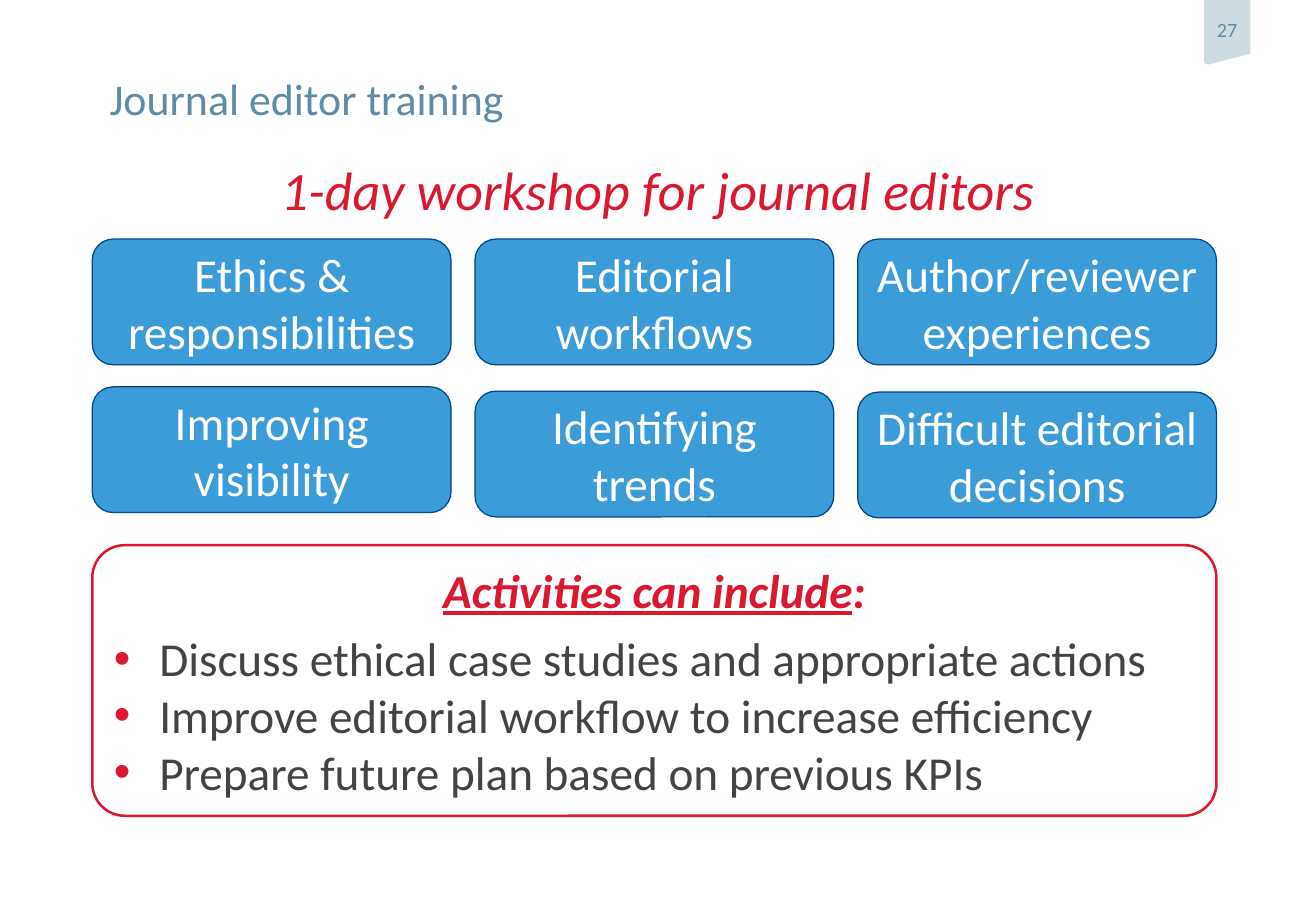
from dataclasses import dataclass

from lxml.etree import SubElement
from pptx import Presentation
from pptx.dml.color import RGBColor
from pptx.enum.shapes import MSO_SHAPE
from pptx.enum.text import MSO_ANCHOR, MSO_AUTO_SIZE, PP_ALIGN
from pptx.oxml.ns import qn
from pptx.util import Cm, Pt


@dataclass(frozen=True)
class Theme:
    """Colours, font and type sizes of the slide."""
    font: str = "Calibri"
    white: str = "FFFFFF"
    slate: str = "608BA3"
    mist: str = "CEDBE0"
    blue: str = "3C9CD7"
    navy: str = "00468A"
    red: str = "DB1830"
    ink: str = "424344"
    small: int = 12
    title: int = 26
    text: int = 28
    lead: int = 32


class Deck:
    """Draws styled elements on the current slide."""

    def __init__(self, theme, width, height):
        """Open a deck of the given size with one slide."""
        self.theme = theme
        self.file = Presentation()
        self.file.slide_width, self.file.slide_height = Cm(width), Cm(height)
        self.slide = self.file.slides.add_slide(self.file.slide_layouts[1])

    def place(self, shape, box):
        """Move a shape to a box in centimetres."""
        shape.left, shape.top, shape.width, shape.height = map(Cm, box)

    def frame(self, shape, anchor=MSO_ANCHOR.TOP, inset=(0, 0, 0, 0), wrap=True):
        """Set up the text frame of a shape and return it."""
        frame = shape.text_frame
        frame.auto_size = MSO_AUTO_SIZE.NONE
        frame.word_wrap = wrap
        frame.vertical_anchor = anchor
        (frame.margin_left, frame.margin_top,
         frame.margin_right, frame.margin_bottom) = map(Cm, inset)
        return frame

    def run(self, para, text, size, color, **style):
        """Add one styled run to a paragraph."""
        run = para.add_run()
        run.text = text
        font = run.font
        font.name, font.size = self.theme.font, Pt(size)
        font.color.rgb = RGBColor.from_string(color)
        for name, value in style.items():
            setattr(font, name, value)

    def align(self, para, side, before=0):
        """Set the alignment and the space before a paragraph."""
        para.alignment = side
        para.space_before = Pt(before)

    def bullet(self, para, indent, color):
        """Give a paragraph a coloured bullet, or none without an indent."""
        props = para._p.get_or_add_pPr()
        props.set("marL", str(Cm(indent)))
        props.set("indent", str(-Cm(indent)))
        if not indent:
            SubElement(props, qn("a:buNone"))
            return
        tint = SubElement(props, qn("a:buClr"))
        SubElement(tint, qn("a:srgbClr"), val=color)
        SubElement(props, qn("a:buFont"), typeface="Arial")
        SubElement(props, qn("a:buChar"), char="•")

    def paint(self, shape, fill, line=None, width=0.75):
        """Set the fill and outline of a shape and drop its shadow."""
        shape.shadow.inherit = False
        shape.fill.solid()
        shape.fill.fore_color.rgb = RGBColor.from_string(fill)
        if line:
            shape.line.color.rgb = RGBColor.from_string(line)
            shape.line.width = Pt(width)
        else:
            shape.line.fill.background()

    def title(self, text, box):
        """Fill the title placeholder."""
        shape = self.slide.shapes.title
        self.place(shape, box)
        para = self.frame(shape).paragraphs[0]
        self.align(para, PP_ALIGN.LEFT)
        self.run(para, text, self.theme.title, self.theme.slate)

    def lead(self, text, box):
        """Add the centred italic lead line."""
        shape = self.slide.shapes.add_textbox(*map(Cm, box))
        para = self.frame(shape, inset=(0.2,) * 4).paragraphs[0]
        self.align(para, PP_ALIGN.CENTER)
        self.run(para, text, self.theme.lead, self.theme.red, italic=True)

    def round(self, box, fill, line, width=0.75):
        """Add a rounded rectangle."""
        shape = self.slide.shapes.add_shape(MSO_SHAPE.ROUNDED_RECTANGLE, *map(Cm, box))
        self.paint(shape, fill, line, width)
        return shape

    def tile(self, text, box):
        """Add a topic tile."""
        shape = self.round(box, self.theme.blue, self.theme.navy)
        frame = self.frame(shape, MSO_ANCHOR.MIDDLE, (0.2, 0.13, 0.2, 0.13))
        para = frame.paragraphs[0]
        self.align(para, PP_ALIGN.CENTER)
        self.run(para, text, self.theme.text, self.theme.white)

    def panel(self, head, items, box, pad):
        """Add an outlined panel holding a heading and a bulleted list."""
        theme = self.theme
        shape = self.round(box, theme.white, theme.red, 1.5)
        shape.adjustments[0] = 0.12
        body = self.slide.placeholders[1]
        left, top, width, height = box
        self.place(body, (left + pad, top + pad, width - 2 * pad, height - 2 * pad))
        shape._element.addnext(body._element)
        frame = self.frame(body, inset=(0.25, 0.13, 0.25, 0.13))
        para = frame.paragraphs[0]
        self.bullet(para, 0, theme.red)
        self.align(para, PP_ALIGN.CENTER)
        strong = {"bold": True, "italic": True}
        self.run(para, head, theme.text, theme.red, underline=True, **strong)
        self.run(para, ":", theme.text, theme.red, **strong)
        for index, item in enumerate(items):
            para = frame.add_paragraph()
            self.bullet(para, 0.95, theme.red)
            self.align(para, PP_ALIGN.LEFT, 0 if index else 7)
            self.run(para, item, theme.text, theme.ink)

    def badge(self, text, points):
        """Add the page number on its ribbon."""
        first, *rest = [tuple(map(Cm, point)) for point in points]
        pen = self.slide.shapes.build_freeform(*first)
        pen.add_line_segments(rest)
        shape = pen.convert_to_shape()
        self.paint(shape, self.theme.mist)
        frame = self.frame(shape, MSO_ANCHOR.MIDDLE, (0, 0, 0, 0.1), False)
        para = frame.paragraphs[0]
        self.align(para, PP_ALIGN.CENTER)
        self.run(para, text, self.theme.small, self.theme.slate)


TOPICS = [
    ("Ethics & responsibilities", "Improving visibility", 8.09),
    ("Editorial workflows", "Identifying trends", 8.18),
    ("Author/reviewer experiences", "Difficult editorial decisions", 8.2),
]
ACTIONS = [
    "Discuss ethical case studies and appropriate actions",
    "Improve editorial workflow to increase efficiency",
    "Prepare future plan based on previous KPIs",
]
RIBBON = [(25.17, 0), (26.14, 0), (26.14, 1.12), (25.27, 1.35), (25.2, 1.34), (25.17, 1.27)]


def main():
    """Build and save the slide."""
    deck = Deck(Theme(), 27.51, 19.05)
    deck.badge("27", RIBBON)
    deck.title("Journal editor training", (2.29, 1.5, 22.89, 1.04))
    left, pitch, width, height = 1.93, 8, 7.5, 2.63
    for column, (upper, lower, top) in enumerate(TOPICS):
        x = left + column * pitch
        deck.tile(upper, (x, 5, width, height))
        deck.tile(lower, (x, top, width, height))
    deck.panel("Activities can include", ACTIONS, (left, 11.4, 23.5, 5.66), 0.2)
    deck.lead("1-day workshop for journal editors", (0, 3.07, 27.51, 1.78))
    deck.file.save("out.pptx")


if __name__ == "__main__":
    main()
